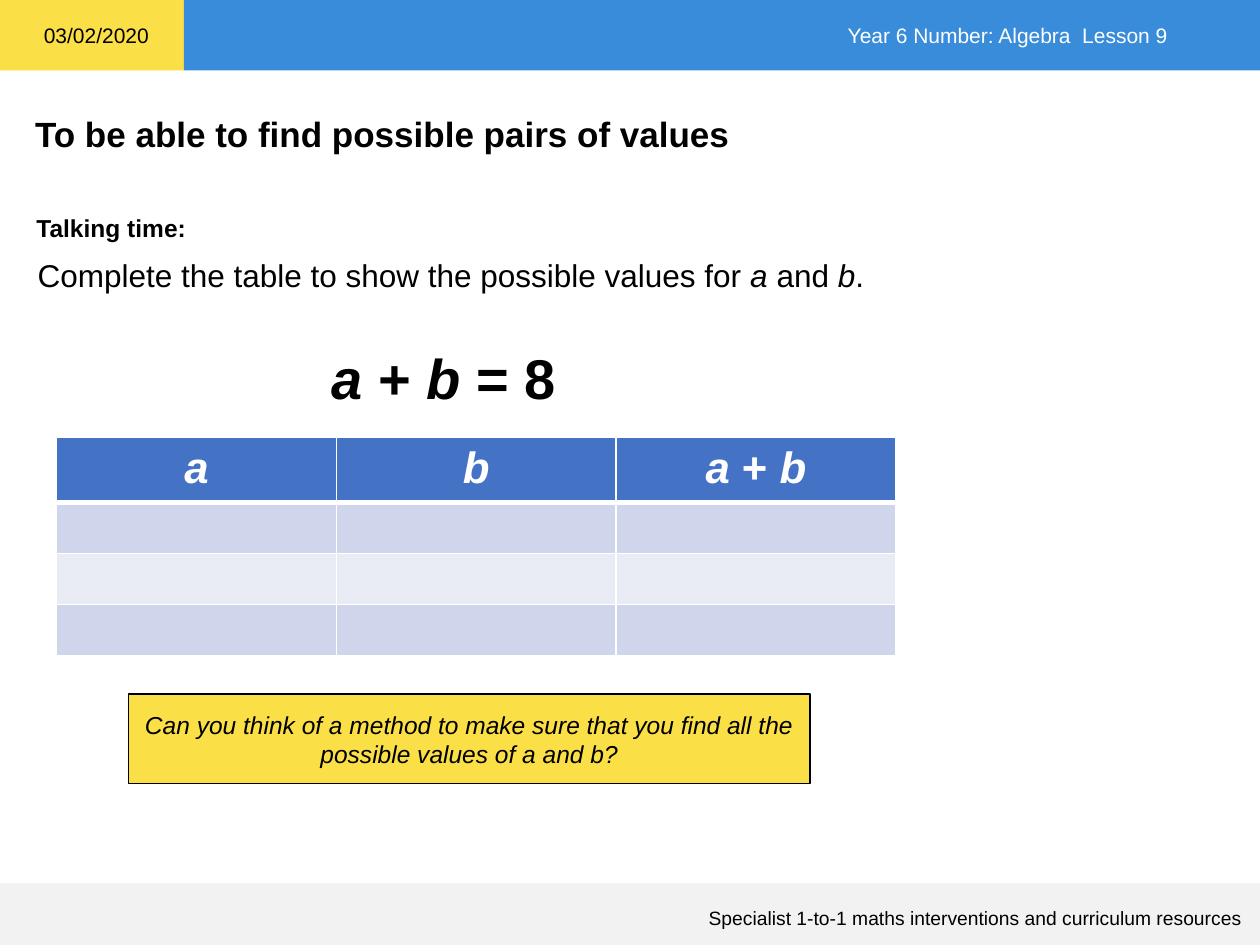
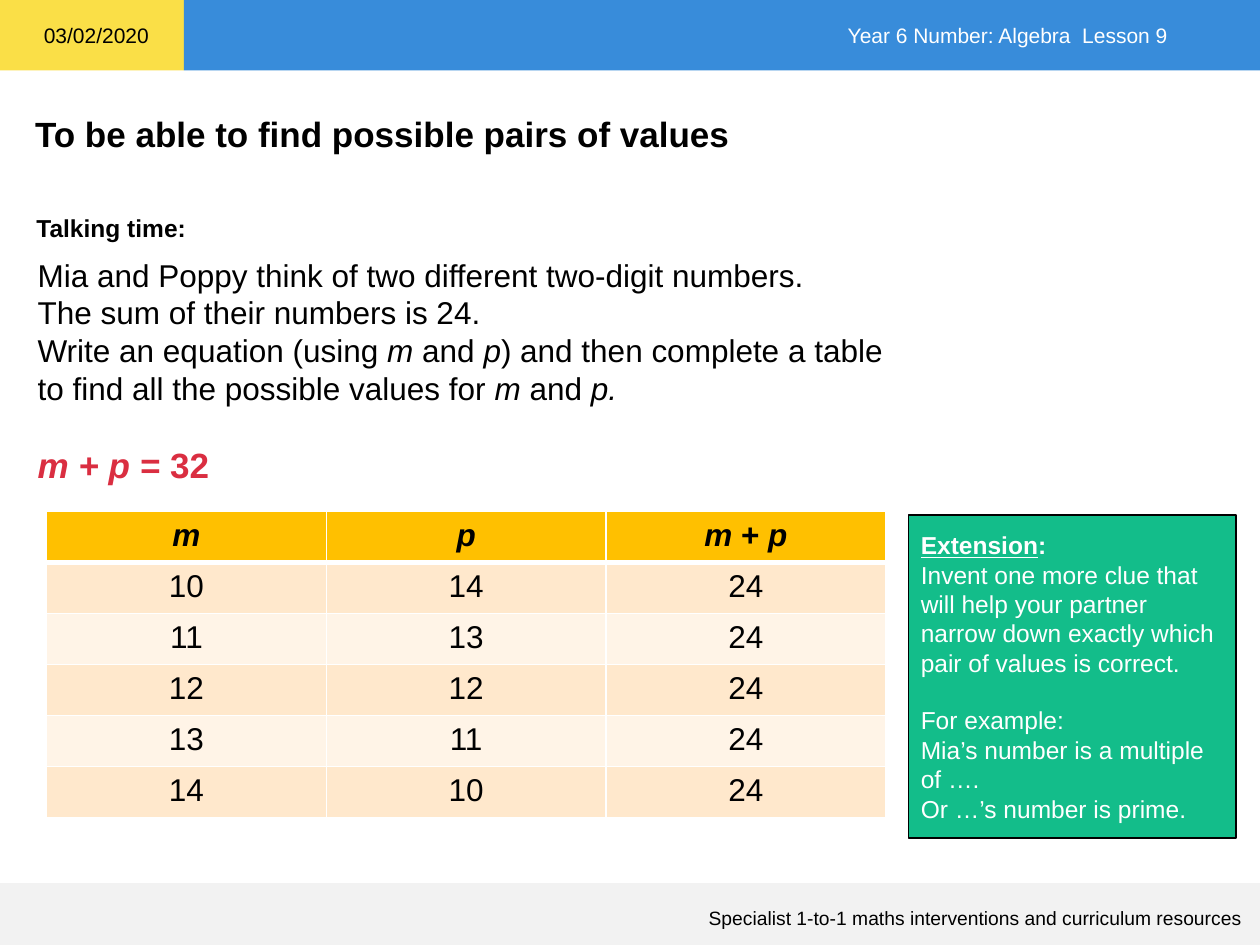
"""Build two algebra lesson slides about finding possible pairs of values."""
from lxml import etree
from pptx import Presentation
from pptx.dml.color import RGBColor
from pptx.enum.shapes import MSO_SHAPE
from pptx.enum.text import MSO_ANCHOR, PP_ALIGN
from pptx.oxml.ns import qn
from pptx.util import Inches, Pt

RECTANGLE = MSO_SHAPE.RECTANGLE
TOP, MIDDLE = MSO_ANCHOR.TOP, MSO_ANCHOR.MIDDLE
LEFT, CENTER, RIGHT = PP_ALIGN.LEFT, PP_ALIGN.CENTER, PP_ALIGN.RIGHT

COLORS = {
    "black": "000000",
    "white": "FFFFFF",
    "yellow": "FADF47",
    "blue": "388CDA",
    "grey": "F2F2F2",
    "green": "13BD8A",
    "red": "DA2E41",
}
BLUE_TABLE = {"header": "4472C4", "bands": ("CFD5EA", "E9EBF5")}
ORANGE_TABLE = {"header": "FFC000", "bands": ("FFE8CC", "FFF4E7")}
FONT = "Arial"
ITALIC = {"italic": True}
UNDERLINE = {"underline": True}
COLUMN_WIDTH = 2.22
ROW_HEIGHT = 0.405
SUM = 24


def rgb(value):
    return RGBColor.from_string(value)


def format_font(font, size, color="black", **values):
    font.name = FONT
    font.size = Pt(size)
    font.color.rgb = rgb(COLORS[color])
    for name, value in values.items():
        setattr(font, name, value)


def write_text(frame, paragraphs, style, align=LEFT, accent=ITALIC):
    """Write (text, overrides) pairs; parts between asterisks take the accent."""
    for index, (text, overrides) in enumerate(paragraphs):
        paragraph = frame.add_paragraph() if index else frame.paragraphs[0]
        values = {**style, **overrides}
        paragraph.alignment = align
        paragraph.space_before = Pt(values.pop("before", 0))
        for part_index, part in enumerate(text.split("*")):
            if part:
                run = paragraph.add_run()
                run.text = part
                format_font(run.font, **{**values, **(accent if part_index % 2 else {})})


def add_text(slide, box, paragraphs, style, wrap=True):
    shape = slide.shapes.add_textbox(*map(Inches, box))
    frame = shape.text_frame
    frame.word_wrap = wrap
    frame.vertical_anchor = TOP
    write_text(frame, paragraphs, style)


def add_panel(slide, box, fill, outlined=False):
    shape = slide.shapes.add_shape(RECTANGLE, *map(Inches, box))
    shape.shadow.inherit = False
    shape.fill.solid()
    shape.fill.fore_color.rgb = rgb(COLORS[fill])
    if outlined:
        shape.line.color.rgb = rgb(COLORS["black"])
        shape.line.width = Pt(1)
    else:
        shape.line.fill.background()
    shape.text_frame.word_wrap = True
    shape.text_frame.vertical_anchor = MIDDLE
    return shape.text_frame


def add_cell_border(cell, side, width):
    properties = cell._tc.get_or_add_tcPr()
    line = etree.SubElement(properties, qn(f"a:ln{side}"), w=str(Pt(width)))
    fill = etree.SubElement(line, qn("a:solidFill"))
    etree.SubElement(fill, qn("a:srgbClr"), val=COLORS["white"])


def add_value_table(slide, left, top, rows, palette, header_style, header_height=ROW_HEIGHT):
    """Add a banded table whose first row is the heading."""
    heights = [header_height] + [ROW_HEIGHT] * (len(rows) - 1)
    column_count = len(rows[0])
    table = slide.shapes.add_table(
        len(rows), column_count, Inches(left), Inches(top),
        Inches(COLUMN_WIDTH * column_count), Inches(sum(heights))).table
    for column in table.columns:
        column.width = Inches(COLUMN_WIDTH)
    for row_index, values in enumerate(rows):
        table.rows[row_index].height = Inches(heights[row_index])
        is_header = row_index == 0
        fill = palette["header"] if is_header else palette["bands"][(row_index - 1) % 2]
        widths = {"L": 1, "R": 1, "T": 3 if row_index == 1 else 1, "B": 3 if is_header else 1}
        for column_index, value in enumerate(values):
            cell = table.cell(row_index, column_index)
            for side, width in widths.items():
                add_cell_border(cell, side, width)
            cell.fill.solid()
            cell.fill.fore_color.rgb = rgb(fill)
            style = header_style if is_header else {"size": 18}
            write_text(cell.text_frame, [(str(value), {})], style, CENTER)


def add_lesson_slide(presentation):
    """Add a blank slide with the bands, date, title and talking label."""
    slide = presentation.slides.add_slide(presentation.slide_layouts[6])
    add_panel(slide, (0, 0, 1.46, 0.56), "yellow")
    header = add_panel(slide, (1.46, 0, 8.54, 0.56), "blue")
    header.margin_right = Inches(0.73)
    write_text(header, [("Year 6 Number: Algebra  Lesson 9", {})],
               {"size": 12, "color": "white"}, RIGHT)
    footer = add_panel(slide, (0, 7.01, 10, 0.49), "grey")
    footer.margin_right = Inches(0.14)
    footer.margin_top, footer.margin_bottom = Inches(0.06), 0
    write_text(footer, [("Specialist 1-to-1 maths interventions and curriculum resources", {})],
               {"size": 11}, RIGHT)
    add_text(slide, (0.18, 0.84, 9.77, 0.44),
             [("To be able to find possible pairs of values", {})], {"size": 20, "bold": True})
    add_text(slide, (0.25, 0.13, 1.04, 0.3), [("03/02/2020", {})], {"size": 12}, wrap=False)
    add_text(slide, (0.19, 1.64, 1.39, 0.34), [("Talking time:", {})],
             {"size": 14, "bold": True}, wrap=False)
    return slide


def build_table_task(presentation):
    slide = add_lesson_slide(presentation)
    add_text(slide, (0.2, 1.98, 9.61, 0.71),
             [("Complete the table to show the possible values for *a *and *b*.", {})], {"size": 18})
    add_text(slide, (2.53, 2.68, 2.19, 0.94), [("*a + b* = 8", {})], {"size": 32, "bold": True})
    rows = [("*a*", "*b*", "*a* + *b*")] + [("", "", "")] * 3
    add_value_table(slide, 0.45, 3.47, rows, BLUE_TABLE,
                    {"size": 25, "color": "white", "bold": True}, header_height=0.5)
    question = add_panel(slide, (1.02, 5.51, 5.41, 0.71), "yellow", outlined=True)
    write_text(question, [("Can you think of a method to make sure that you find all the "
                           "possible values of a and b?", {})],
               {"size": 14, "italic": True}, CENTER)


def build_equation_task(presentation):
    slide = add_lesson_slide(presentation)
    add_text(slide, (0.2, 1.98, 9.61, 1.95), [
        ("Mia and Poppy think of two different two-digit numbers.", {}),
        ("The sum of their numbers is 24.", {}),
        ("Write an equation (using *m* and *p*) and then complete a table", {}),
        ("to find all the possible values for *m *and *p.*", {}),
        ("*m + p = *32", {"size": 20, "color": "red", "bold": True, "before": 21}),
    ], {"size": 18})
    rows = [("*m*", "*p*", "*m* + *p*")] + [(m, SUM - m, SUM) for m in range(10, 15)]
    add_value_table(slide, 0.37, 4.06, rows, ORANGE_TABLE, {"size": 18, "bold": True})
    extension = add_panel(slide, (7.21, 4.09, 2.6, 2.56), "green", outlined=True)
    write_text(extension, [
        ("*Extension*:", {"bold": True}),
        ("Invent one more clue that will help your partner narrow down exactly which "
         "pair of values is correct.", {}),
        ("For example:", {"before": 16}),
        ("Mia’s number is a multiple of ….", {}),
        ("Or …’s number is prime.", {}),
    ], {"size": 14, "color": "white"}, accent=UNDERLINE)


def main():
    presentation = Presentation()
    presentation.slide_width = Inches(10)
    presentation.slide_height = Inches(7.5)
    build_table_task(presentation)
    build_equation_task(presentation)
    presentation.save("out.pptx")


if __name__ == "__main__":
    main()
